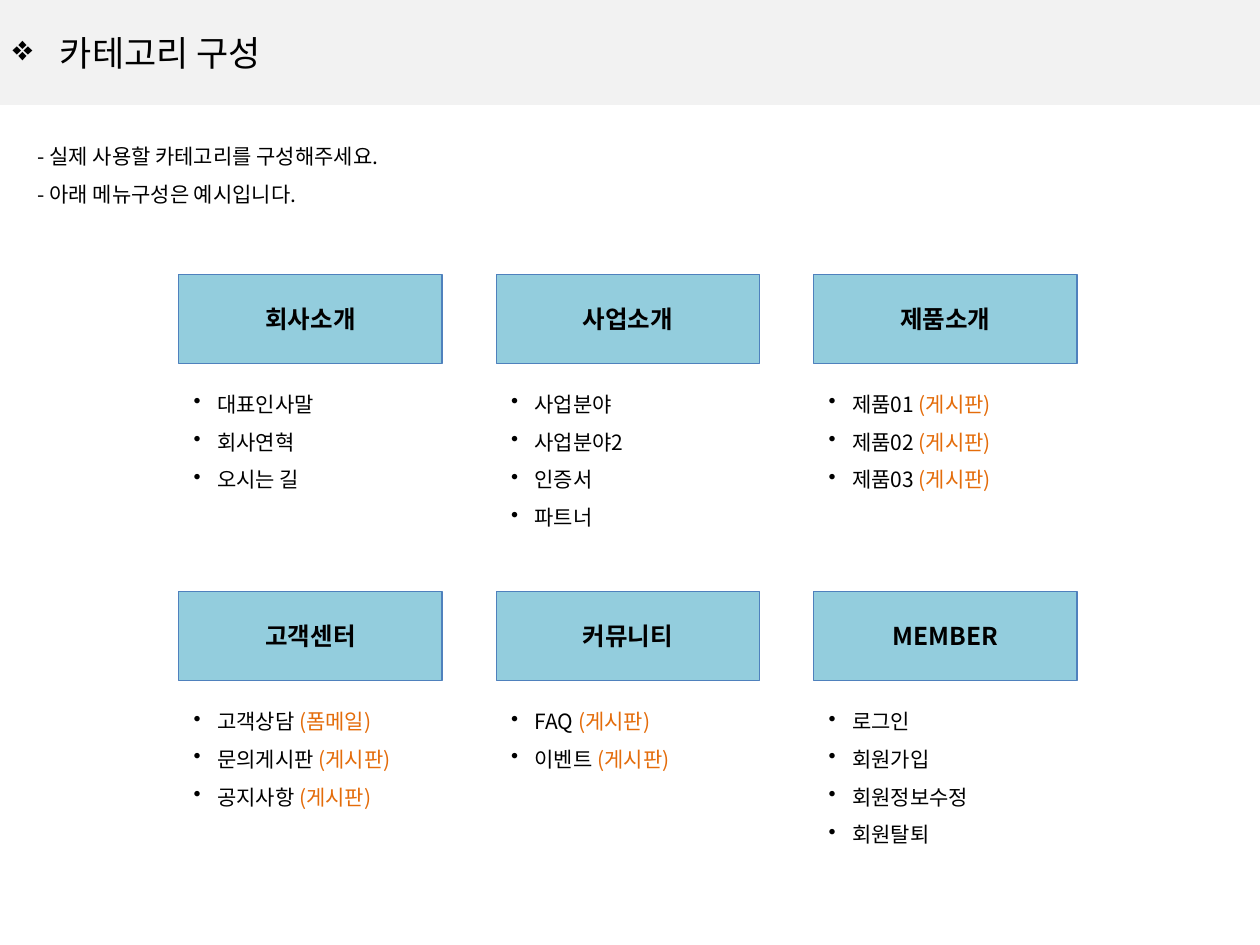
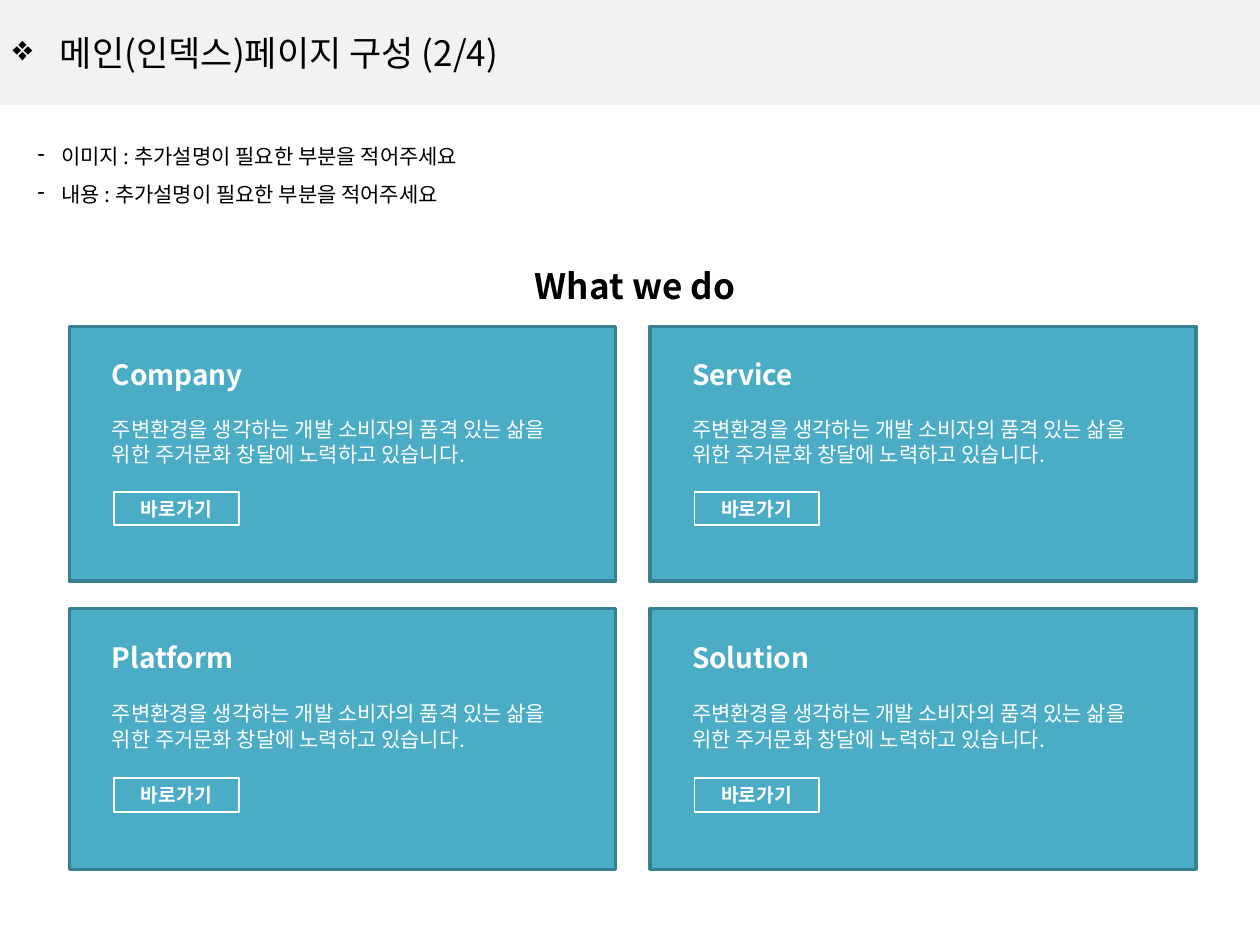
from itertools import product

from lxml import etree
from pptx import Presentation
from pptx.dml.color import RGBColor
from pptx.enum import shapes, text
from pptx.oxml.ns import qn
from pptx.util import Pt

FONT = "Noto Sans CJK KR"
HUES = {
    "ink": "000000", "white": "FFFFFF", "band": "F2F2F2", "menu": "93CDDD",
    "rim": "4F81BD", "note": "E46C0A", "card": "4BACC6", "edge": "377F92",
}
LEFT, MID = text.PP_ALIGN.LEFT, text.PP_ALIGN.CENTER
BOARD, MAIL = "(게시판)", "(폼메일)"
MENUS = [
    ("회사소개", ["대표인사말", "회사연혁", "오시는 길"]),
    ("사업소개", ["사업분야", "사업분야2", "인증서", "파트너"]),
    ("제품소개", [("제품01 ", BOARD), ("제품02 ", BOARD), ("제품03 ", BOARD)]),
    ("고객센터", [("고객상담 ", MAIL), ("문의게시판 ", BOARD), ("공지사항 ", BOARD)]),
    ("커뮤니티", [("FAQ ", BOARD), ("이벤트 ", BOARD)]),
    ("MEMBER", ["로그인", "회원가입", "회원정보수정", "회원탈퇴"]),
]
CARDS = ["Company", "Service", "Platform", "Solution"]
PITCH = "주변환경을 생각하는 개발 소비자의 품격 있는 삶을 위한 주거문화 창달에 노력하고 있습니다."


def hue(name):
    return RGBColor.from_string(HUES[name])


def style(para, size, color="ink", bold=False, align=LEFT, gap=None, mark=None, dent=13.5):
    para.alignment = align
    if gap:
        para.line_spacing = gap
    font = para.font
    font.name, font.size, font.bold = FONT, Pt(size), bold
    font.color.rgb = hue(color)
    props = para._p.get_or_add_pPr()
    base = props.find(qn("a:defRPr"))
    etree.SubElement(base, qn("a:ea")).set("typeface", FONT)
    if mark:
        props.set("marL", str(Pt(dent)))
        props.set("indent", str(-Pt(dent)))
        bullet = etree.Element(qn("a:buChar"))
        bullet.set("char", mark)
        base.addprevious(bullet)


def write(shape, lines, size, wrap=True, anchor=text.MSO_ANCHOR.TOP, **look):
    frame = shape.text_frame
    frame.word_wrap = wrap
    frame.auto_size = text.MSO_AUTO_SIZE.NONE
    frame.vertical_anchor = anchor
    for i, line in enumerate(lines):
        para = frame.add_paragraph() if i else frame.paragraphs[0]
        parts = (line,) if isinstance(line, str) else line
        for j, part in enumerate(parts):
            run = para.add_run()
            run.text = part
            if j:
                run.font.color.rgb = hue("note")
        style(para, size, **look)


def label(tree, box, lines, size, **look):
    shape = tree.add_textbox(*map(Pt, box))
    write(shape, lines, size, **look)


def block(tree, box, fill, line, width):
    shape = tree.add_shape(shapes.MSO_SHAPE.RECTANGLE, *map(Pt, box))
    shape.shadow.inherit = False
    if fill:
        shape.fill.solid()
        shape.fill.fore_color.rgb = hue(fill)
    else:
        shape.fill.background()
    shape.line.color.rgb = hue(line)
    shape.line.width = Pt(width)
    return shape


def header(slide, title, notes, mark=None):
    band = slide.shapes.title
    band.left, band.top, band.width, band.height = map(Pt, (0, 0, 720, 60))
    band.fill.solid()
    band.fill.fore_color.rgb = hue("band")
    write(band, [title], 20, anchor=text.MSO_ANCHOR.MIDDLE, mark="❖", dent=27)
    label(slide.shapes, (14.4, 71.5, 692, 51), notes, 12, gap=1.5, mark=mark)


def menu(tree, box, name, items):
    x, y, w, h = box
    head = block(tree, box, "menu", "rim", 0.75)
    write(head, [name], 14, anchor=text.MSO_ANCHOR.MIDDLE, bold=True, align=MID)
    area = (x + 1.4, y + h + 5.2, w - 1.5, 7.2 + 21.6 * len(items))
    label(tree, area, items, 12, gap=1.5, mark="•")


def card(slide, box, name):
    x, y, w, h = box
    tree = slide.shapes.add_group_shape().shapes
    block(tree, box, "card", "edge", 2)
    label(tree, (x + 17, y + 0.33 * h, 272, 33.5), [PITCH], 12, color="white")
    link = block(tree, (x + 25.4, y + 0.65 * h, 71.3, 0.13 * h), None, "white", 1)
    link.text_frame.margin_top = link.text_frame.margin_bottom = 0
    write(link, ["바로가기"], 11, anchor=text.MSO_ANCHOR.MIDDLE,
          color="white", bold=True, align=MID)
    label(tree, (x + 17, y + 0.1 * h, 272, 24.5), [name], 16, color="white", bold=True)


def sitemap(slide):
    header(slide, "카테고리 구성",
           ["- 실제 사용할 카테고리를 구성해주세요.", "- 아래 메뉴구성은 예시입니다."])
    for (row, col), (name, items) in zip(product(range(2), range(3)), MENUS):
        box = (102.2 + 181.4 * col, 156.7 + 181.2 * row, 150.5, 51)
        menu(slide.shapes, box, name, items)


def index(slide):
    header(slide, "메인(인덱스)페이지 구성 (2/4)",
           ["이미지 : 추가설명이 필요한 부분을 적어주세요",
            "내용 : 추가설명이 필요한 부분을 적어주세요"], mark="-")
    label(slide.shapes, (296.6, 147.6, 132.5, 31.5), ["What we do"], 20,
          wrap=False, bold=True, align=MID)
    rows = [(186.5, 145.5), (347.8, 149)]
    for ((y, h), col), name in zip(product(rows, range(2)), CARDS):
        card(slide, (39.8 + 331.6 * col, y, 312, h), name)


def main():
    deck = Presentation()
    deck.slide_width, deck.slide_height = Pt(720), Pt(540)
    for build in (sitemap, index):
        build(deck.slides.add_slide(deck.slide_layouts[5]))
    deck.save("out.pptx")


if __name__ == "__main__":
    main()
